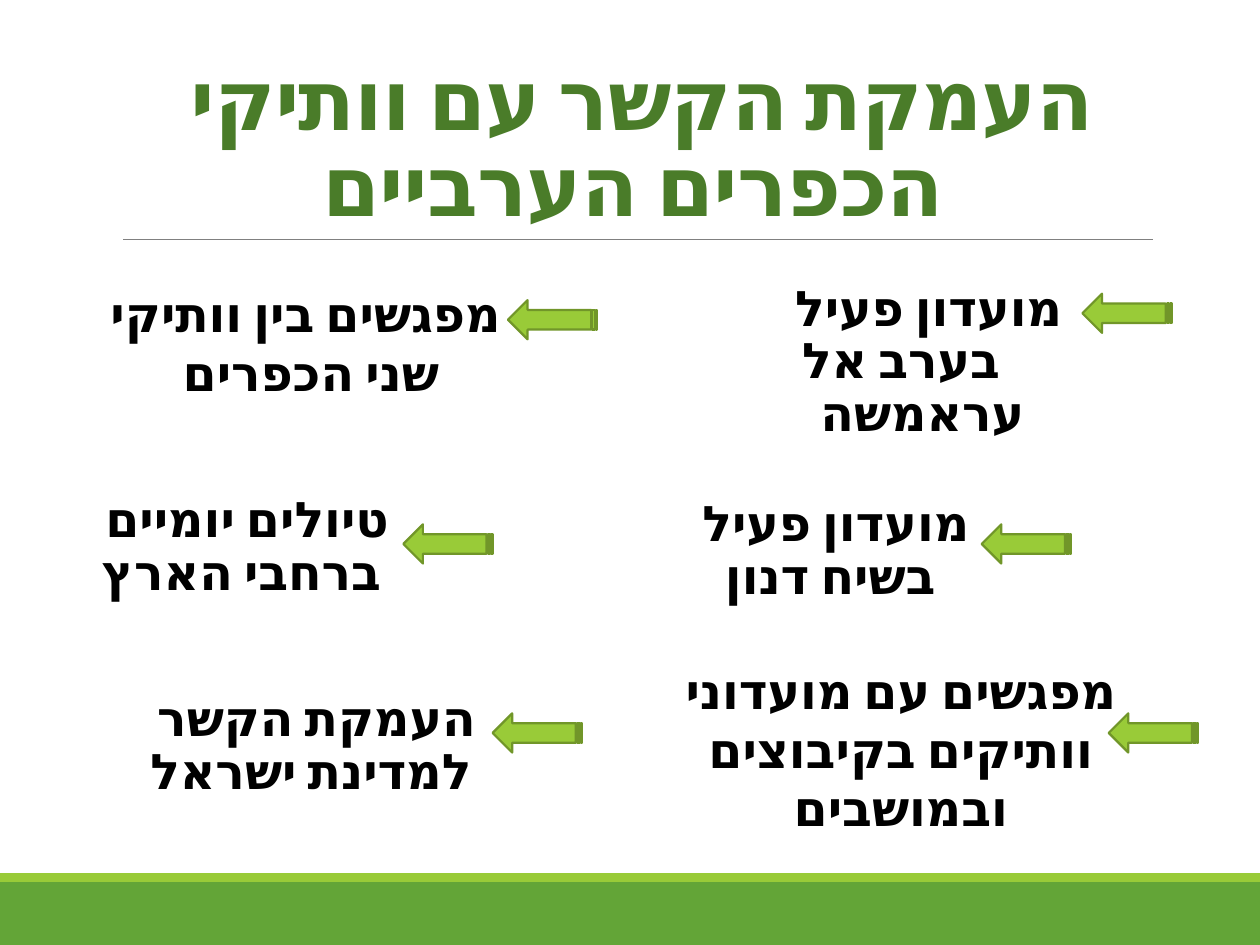
from dataclasses import dataclass

from lxml.etree import SubElement
from pptx import Presentation
from pptx.dml.color import RGBColor
from pptx.enum.shapes import MSO_CONNECTOR as Connector, MSO_SHAPE as Preset
from pptx.enum.text import MSO_ANCHOR as Anchor, PP_ALIGN as Align
from pptx.oxml.ns import qn
from pptx.slide import Slide
from pptx.util import Cm, Pt

COLORS = {
    "band": "63A537",
    "lime": "99CB38",
    "arrow_line": "719629",
    "rule": "808080",
    "title": "4A7C29",
    "body": "000000",
}
FONT = "Calibri"
ITEM_WIDTH, ITEM_HEIGHT = 9.14, 2.59
ARROW_WIDTH, ARROW_HEIGHT = 1.8, 0.79


@dataclass(frozen=True)
class Line:
    text: str
    margin: float = 0
    indent: float = 0


@dataclass(frozen=True)
class TextBlock:
    left: float
    top: float
    lines: tuple[Line, ...]
    width: float = ITEM_WIDTH
    height: float = ITEM_HEIGHT
    size: float = 28
    color: str = "body"
    spacing: float = 0.9
    side_inset: float = 0
    anchor: Anchor = Anchor.TOP
    tracking: int = 0


@dataclass(frozen=True)
class Item:
    block: TextBlock
    arrow_left: float
    arrow_top: float


TITLE = TextBlock(
    2.29, 0.79, (Line("העמקת הקשר עם וותיקי \vהכפרים הערביים"),),
    width=20.96, height=4.04, size=47.7, color="title", spacing=0.85,
    side_inset=0.25, anchor=Anchor.BOTTOM, tracking=-50,
)

ITEMS = (
    Item(TextBlock(14.15, 5.59, (
        Line(" מועדון פעיל "),
        Line("בערב אל עראמשה", margin=0.25, indent=0.86),
    )), 21.82, 5.92),
    Item(TextBlock(12.17, 9.93, (
        Line("מועדון פעיל "), Line("בשיח דנון"),
    )), 19.79, 10.57),
    Item(TextBlock(13.59, 13.18, (
        Line("מפגשים עם מועדוני וותיקים בקיבוצים ובמושבים"),
    ), spacing=1), 22.35, 14.38),
    Item(TextBlock(1.98, 5.59, (
        Line(" מפגשים בין וותיקי שני הכפרים", margin=0.56),
    ), spacing=1), 10.24, 6.05),
    Item(TextBlock(0.3, 9.86, (
        Line("טיולים יומיים "), Line("ברחבי הארץ"),
    )), 8.13, 10.57),
    Item(TextBlock(1.7, 13.87, (
        Line("העמקת הקשר "), Line("למדינת ישראל"),
    )), 9.93, 14.38),
)


def rgb(name: str) -> RGBColor:
    return RGBColor.from_string(COLORS[name])


def apply_format(target: object, values: dict) -> None:
    for name, value in values.items():
        setattr(target, name, value)


def add_band(slide: Slide, top: float, height: float, color: str) -> None:
    shape = slide.shapes.add_shape(Preset.RECTANGLE, 0, Cm(top), Cm(25.4), Cm(height))
    shape.shadow.inherit = False
    shape.fill.solid()
    shape.fill.fore_color.rgb = rgb(color)
    shape.line.fill.background()


def add_rule(slide: Slide) -> None:
    connector = slide.shapes.add_connector(
        Connector.STRAIGHT, Cm(2.48), Cm(4.83), Cm(23.24), Cm(4.83)
    )
    connector.line.color.rgb = rgb("rule")
    connector.line.width = Pt(0.5)
    SubElement(connector.element.spPr, qn("a:effectLst"))


def add_text(slide: Slide, block: TextBlock) -> None:
    shape = slide.shapes.add_textbox(
        Cm(block.left), Cm(block.top), Cm(block.width), Cm(block.height)
    )
    frame = shape.text_frame
    apply_format(frame, {
        "word_wrap": True,
        "vertical_anchor": block.anchor,
        "margin_left": Cm(block.side_inset),
        "margin_right": Cm(block.side_inset),
        "margin_top": Cm(0.13),
        "margin_bottom": Cm(0.13),
    })
    for index, line in enumerate(block.lines):
        paragraph = frame.add_paragraph() if index else frame.paragraphs[0]
        apply_format(paragraph, {
            "text": line.text,
            "alignment": Align.CENTER,
            "line_spacing": block.spacing,
        })
        properties = paragraph._p.get_or_add_pPr()
        properties.set("rtl", "1")
        properties.set("marL", str(Cm(line.margin)))
        properties.set("indent", str(Cm(line.indent)))
        for run in paragraph.runs:
            apply_format(run.font, {"name": FONT, "size": Pt(block.size), "bold": True})
            run.font.color.rgb = rgb(block.color)
            run_properties = run._r.get_or_add_rPr()
            run_properties.set("lang", "he-IL")
            run_properties.set("spc", str(block.tracking))
            SubElement(run_properties, qn("a:cs"), typeface=FONT)


def add_arrow(slide: Slide, left: float, top: float) -> None:
    shape = slide.shapes.add_shape(
        Preset.STRIPED_RIGHT_ARROW, Cm(left), Cm(top), Cm(ARROW_WIDTH), Cm(ARROW_HEIGHT)
    )
    shape.rotation = 180
    shape.shadow.inherit = False
    shape.fill.solid()
    shape.fill.fore_color.rgb = rgb("lime")
    shape.line.color.rgb = rgb("arrow_line")
    shape.line.width = Pt(1.25)


def main() -> None:
    presentation = Presentation()
    apply_format(presentation, {"slide_width": Cm(25.4), "slide_height": Cm(19.05)})
    slide = presentation.slides.add_slide(presentation.slide_layouts[6])
    add_band(slide, 17.78, 1.27, "band")
    add_band(slide, 17.6, 0.18, "lime")
    add_rule(slide)
    add_text(slide, TITLE)
    for item in ITEMS:
        add_text(slide, item.block)
        add_arrow(slide, item.arrow_left, item.arrow_top)
    presentation.save("out.pptx")


if __name__ == "__main__":
    main()
